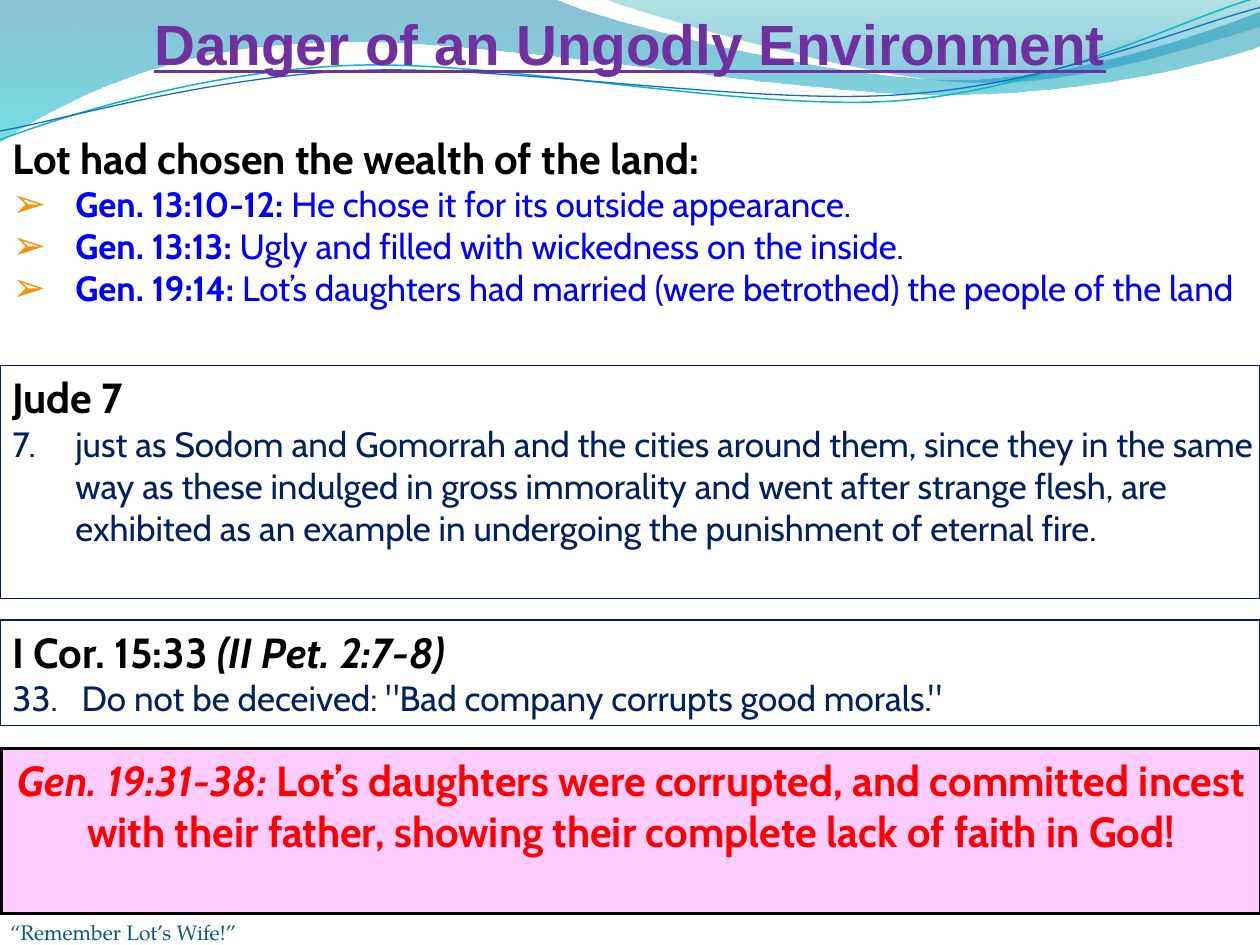
"""Build the slide on the danger of an ungodly environment."""
from lxml import etree
from pptx import Presentation
from pptx import util as u
from pptx.dml.color import RGBColor
from pptx.enum import shapes, text
from pptx.oxml import parse_xml
from pptx.oxml.ns import nsdecls, qn

COLOURS = {
    "title": "7030A0", "footer": "045D75", "heading": "000000", "point": "0000FF",
    "verse": "002060", "warning": "FF0000", "bullet": "F49100", "paper": "FFFFFF",
    "pink": "FFCCFF", "teal_line": "0AB8BF", "blue_line": "0F6FC6",
}
TITLE = "Danger of an Ungodly Environment"
FOOTER = "“Remember Lot’s Wife!”"
STYLES = {"heading": 24, "point": 20, "verse": 20, "warning": 24}

BANDS = [
    ((0, 0), [
        [(4.4, -0.01)],
        [(4.76, 0.17), (6.64, 0.63), (7.58, 0.63)],
        [(8.53, 0.63), (9.58, 0.26), (10, 0.09)],
        [(10.01, 0.36)],
        [(9.83, 0.44), (8.7, 0.76), (7.46, 0.75)],
        [(6.22, 0.75), (3.82, 0.28), (2.57, 0.34)],
        [(1.29, 0.36), (0.46, 0.83), (-0.01, 1.13)],
        [(0, 0)],
    ], [(0, "0074A1", 45), (100, "00C6CF", 55)]),
    ((4.79, -0.01), [
        [(5.09, 0.11), (6.82, 0.62), (7.69, 0.65)],
        [(8.56, 0.69), (9.61, 0.32), (10, 0.21)],
        [(10, 0)],
        [(4.79, -0.01)],
    ], [(0, "00A1A9", 30), (80, "008BBF", 45)]),
]
STRANDS = [
    ((0, 1.11), [
        [(0.48, 0.93), (1.58, 0.57), (2.77, 0.52)],
        [(3.95, 0.47), (5.93, 0.89), (7.13, 0.8)],
        [(8.33, 0.71), (9.38, 0.15), (9.98, -0.02)],
    ], "teal_line", 0.85),
    ((0, 1.04), [
        [(0.47, 0.96), (1.64, 0.61), (2.83, 0.56)],
        [(4.03, 0.51), (5.97, 0.84), (7.17, 0.75)],
        [(8.36, 0.67), (9.41, 0.21), (10, 0.06)],
    ], "blue_line", 0.75),
]
PANELS = [
    {"at": (0, 1, 10, 1.85), "hang": 0.5, "paragraphs": [
        ("heading", [("Lot had chosen the wealth of the land:", "b")]),
        ("point", [("Gen. 13:10-12: ", "b"), ("He chose it for its outside appearance.", "")]),
        ("point", [("Gen. 13:13: ", "b"), ("Ugly and filled with wickedness on the inside.", "")]),
        ("point", [("Gen. 19:14: ", "b"),
                   ("Lot’s daughters had married (were betrothed) the people of the land", "")]),
    ]},
    {"at": (0, 2.9, 10, 1.85), "hang": 0.5, "fill": "paper", "line": ("verse", 0.75), "paragraphs": [
        ("heading", [("Jude 7", "b")]),
        ("verse", [("7.\tjust as Sodom and Gomorrah and the cities around them, since they in the "
                    "same way as these indulged in gross immorality and went after strange flesh, "
                    "are exhibited as an example in undergoing the punishment of eternal fire.", "")]),
    ]},
    {"at": (0, 4.92, 10, 0.84), "hang": 0.55, "fill": "paper", "line": ("verse", 0.75), "paragraphs": [
        ("heading", [("I Cor. 15:33 ", "b"), ("(II Pet. 2:7-8)", "bi")]),
        ("verse", [('33.\tDo not be deceived: "Bad company corrupts good morals."', "")]),
    ]},
    {"at": (0.01, 5.94, 10, 1.31), "hang": 0, "fill": "pink", "line": ("heading", 2), "paragraphs": [
        ("warning", [("Gen. 19:31-38: ", "bi"),
                     ("Lot’s daughters were corrupted, and committed incest with their father, "
                      "showing their complete lack of faith in God!", "b")]),
    ]},
]


def colour(name):
    return RGBColor.from_string(COLOURS[name])


def inches(values):
    return [u.Inches(value) for value in values]


def add_wave(page, start, segments, close):
    builder = page.shapes.build_freeform(*inches(start), scale=1.0)
    builder.add_line_segments([inches(point) for segment in segments for point in segment],
                              close=close)
    wave = builder.convert_to_shape()
    wave.shadow.inherit = False
    lines = wave._element.findall(".//" + qn("a:lnTo"))
    for segment in segments:
        group, lines = lines[:len(segment)], lines[len(segment):]
        if len(group) == 3:
            curve = etree.Element(qn("a:cubicBezTo"))
            group[0].addprevious(curve)
            for line in group:
                curve.append(line[0])
                line.getparent().remove(line)
    return wave


def set_gradient(shape, stops):
    entries = "".join(
        f'<a:gs pos="{position * 1000}"><a:srgbClr val="{value}">'
        f'<a:alpha val="{alpha * 1000}"/></a:srgbClr></a:gs>'
        for position, value, alpha in stops)
    shape.fill.background()
    properties = shape._element.spPr
    properties.replace(properties.find(qn("a:noFill")), parse_xml(
        f'<a:gradFill {nsdecls("a")} rotWithShape="1"><a:gsLst>{entries}</a:gsLst>'
        '<a:lin ang="5400000" scaled="1"/></a:gradFill>'))


def set_indent(para, hang, bulleted):
    properties = para._p.get_or_add_pPr()
    properties.set("marL", str(u.Inches(hang)))
    properties.set("indent", str(u.Inches(-hang)))
    if bulleted:
        tint = etree.SubElement(properties, qn("a:buClr"))
        etree.SubElement(tint, qn("a:srgbClr"), val=COLOURS["bullet"])
        etree.SubElement(properties, qn("a:buSzPct"), val="115000")
        etree.SubElement(properties, qn("a:buFont"), typeface="Cabin")
        etree.SubElement(properties, qn("a:buChar"), char="➢")


def style(font, name, size, tint):
    font.name, font.size, font.color.rgb = name, u.Pt(size), colour(tint)


def add_panel(page, panel):
    place = inches(panel["at"])
    if "fill" in panel:
        box = page.shapes.add_shape(shapes.MSO_SHAPE.RECTANGLE, *place)
        box.shadow.inherit = False
        box.fill.solid()
        box.fill.fore_color.rgb = colour(panel["fill"])
        tint, width = panel["line"]
        box.line.color.rgb, box.line.width = colour(tint), u.Pt(width)
    else:
        box = page.shapes.add_textbox(*place)
    frame = box.text_frame
    frame.word_wrap, frame.vertical_anchor = True, text.MSO_ANCHOR.TOP
    frame.margin_right = 0 if panel["paragraphs"][-1][0] == "verse" else u.Inches(0.1)
    for index, (kind, spans) in enumerate(panel["paragraphs"]):
        para = frame.add_paragraph() if index else frame.paragraphs[0]
        para.alignment = text.PP_ALIGN.CENTER if kind == "warning" else text.PP_ALIGN.LEFT
        set_indent(para, panel["hang"], kind == "point")
        style(para.font, "Cabin", STYLES[kind], kind)
        for words, marks in spans:
            span = para.add_run()
            span.text = words
            span.font.bold, span.font.italic = "b" in marks, "i" in marks
            span.font.color.rgb = colour(kind)


def add_line_of_text(box, place, words, margins):
    box.left, box.top, box.width, box.height = inches(place)
    frame = box.text_frame
    frame.word_wrap, frame.vertical_anchor = True, text.MSO_ANCHOR.BOTTOM
    frame.margin_left, frame.margin_top, frame.margin_right, frame.margin_bottom = inches(margins)
    frame.text = words
    return frame.paragraphs[0]


def main():
    deck = Presentation()
    deck.slide_width, deck.slide_height = inches((10, 7.5))
    page = deck.slides.add_slide(deck.slide_layouts[5])
    for start, segments, stops in BANDS:
        band = add_wave(page, start, segments, True)
        set_gradient(band, stops)
        band.line.fill.background()
    for start, segments, tint, width in STRANDS:
        strand = add_wave(page, start, segments, False)
        strand.fill.background()
        strand.line.color.rgb, strand.line.width = colour(tint), u.Pt(width)
    title = page.shapes.title
    page.shapes._spTree.append(title._element)
    para = add_line_of_text(title, (0, 0, 10, 0.61), TITLE, (0, 0.05, 0, 0))
    para.alignment = text.PP_ALIGN.CENTER
    style(para.font, "Arial", 32.4, "title")
    para.font.bold = para.font.underline = True
    footer = page.shapes.add_textbox(0, 0, 0, 0)
    para = add_line_of_text(footer, (0.08, 7.25, 6.5, 0.25), FOOTER, (0, 0, 0, 0))
    style(para.font, "TeX Gyre Pagella", 12, "footer")
    for panel in PANELS:
        add_panel(page, panel)
    deck.save("out.pptx")


if __name__ == "__main__":
    main()
